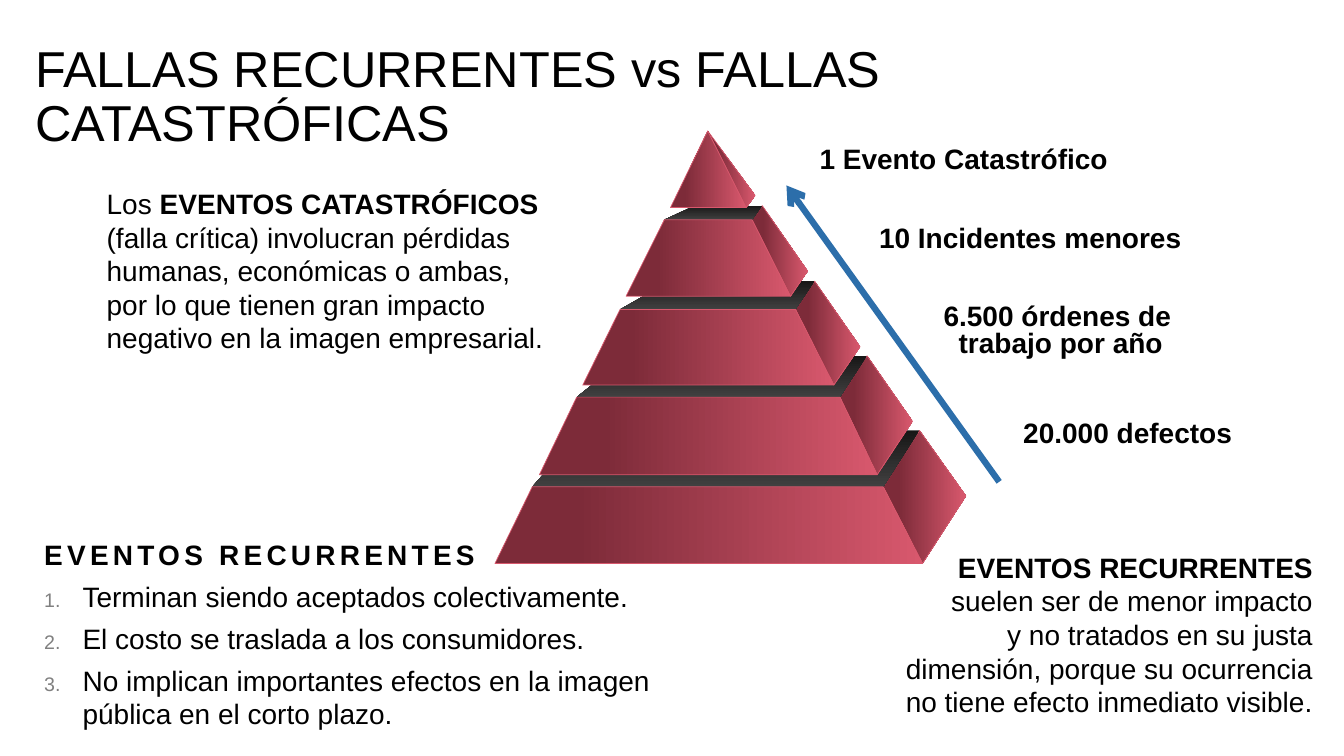
from dataclasses import dataclass

from lxml.etree import SubElement
from pptx import Presentation
from pptx.dml.color import RGBColor
from pptx.enum.shapes import MSO_CONNECTOR as CONNECTOR
from pptx.enum.text import MSO_ANCHOR as ANCHOR, PP_ALIGN as ALIGN
from pptx.oxml.ns import qn
from pptx.util import Pt

PX = 9144  # 100 px to the inch
FONT = "Arial"
BLACK, GRAY, BLUE = "000000", "808080", "2C6EAA"
DARK_RED, LIGHT_RED = "7D2B39", "D8586D"
LID_BACK, LID_FRONT = "181717", "404040"


@dataclass
class Tier:
    top: int
    bottom: int
    top_span: tuple  # left and right x of the front face
    bottom_span: tuple
    back: int  # y of the rear edge of the lid
    back_span: tuple
    corner: tuple  # rear bottom corner of the side face


# From the base to the tip, measured from the pyramid's box
TIERS = [
    Tier(353, 429, (37, 385), (0, 424), 297, (86, 421), (467, 362)),
    Tier(264, 341, (81, 342), (44, 379), 223, (132, 369), (414, 288)),
    Tier(177, 252, (124, 298), (87, 336), 149, (173, 317), (362, 214)),
    Tier(88, 164, (168, 255), (130, 293), 74, (198, 265), (310, 139)),
    Tier(0, 76, (211, 211), (174, 249), 0, (211, 211), (258, 64)),
]

# Text, left, top, width, height
LABELS = [
    (["1 Evento Catastrófico"], (803, 139, 347, 40), 0.9),
    (["10 Incidentes menores"], (862, 220, 324, 37), 0.8),
    (["6.500 órdenes de", "trabajo por año"], (926, 298, 256, 64), 0.8),
    (["20.000 defectos"], (1005, 414, 313, 37), 0.8),
]
CONSEQUENCES = [
    "Terminan siendo aceptados colectivamente.",
    "El costo se traslada a los consumidores.",
    "No implican importantes efectos en la imagen pública en el corto plazo.",
]


def color(value):
    return RGBColor.from_string(value)


def add_frame(slide, box, anchor=ANCHOR.TOP):
    shape = slide.shapes.add_textbox(*(length * PX for length in box))
    frame = shape.text_frame
    frame.word_wrap = True
    frame.vertical_anchor = anchor
    return frame


def add_paragraph(frame, runs, size=20, align=ALIGN.LEFT, line=1.0, after=0):
    """Append a paragraph made of (text, bold) runs."""
    paragraph = frame.paragraphs[0]
    if paragraph.runs:
        paragraph = frame.add_paragraph()
    paragraph.alignment = align
    paragraph.line_spacing = line
    paragraph.space_after = Pt(after)
    for text, bold in runs:
        run = paragraph.add_run()
        run.text = text
        run.font.bold = bold
    return paragraph


def style(paragraph, size=20):
    paragraph.font.name = FONT
    paragraph.font.size = Pt(size)
    paragraph.font.color.rgb = color(BLACK)


def indent(paragraph, left, first=0):
    properties = paragraph._p.get_or_add_pPr()
    properties.set("marL", str(left * PX))
    properties.set("indent", str(first * PX))
    return properties


def number(paragraph):
    properties = indent(paragraph, 38, -38)
    bullet_color = SubElement(properties, qn("a:buClr"))
    SubElement(bullet_color, qn("a:srgbClr"), val=GRAY)
    SubElement(properties, qn("a:buSzPct"), val="70000")
    SubElement(properties, qn("a:buFont"), typeface="+mj-lt")
    SubElement(properties, qn("a:buAutoNum"), type="arabicPeriod")


def add_title(slide, box):
    frame = add_frame(slide, box, ANCHOR.MIDDLE)
    text = "FALLAS RECURRENTES vs FALLAS CATASTRÓFICAS"
    style(add_paragraph(frame, [(text, False)], line=0.9), 36)


def add_catastrophic_note(slide, box):
    style(add_paragraph(add_frame(slide, box), [
        ("Los ", False),
        ("EVENTOS CATASTRÓFICOS ", True),
        ("(falla crítica) involucran pérdidas humanas, económicas o ambas, "
         "por lo que tienen gran impacto negativo en la imagen empresarial.", False),
    ]))


def add_recurrent_note(slide, box):
    frame = add_frame(slide, box)
    for text, bold in [
        ("EVENTOS RECURRENTES", True),
        ("suelen ser de menor impacto", False),
        ("y no tratados en su justa dimensión, porque su ocurrencia "
         "no tiene efecto inmediato visible.", False),
    ]:
        style(add_paragraph(frame, [(text, bold)], align=ALIGN.RIGHT))


def add_consequences(slide, box):
    frame = add_frame(slide, box)
    heading = add_paragraph(frame, [("EVENTOS RECURRENTES", True)], after=6)
    heading.runs[0]._r.get_or_add_rPr().set("spc", "300")
    style(heading)
    for text in CONSEQUENCES:
        paragraph = add_paragraph(frame, [(text, False)], after=6)
        number(paragraph)
        style(paragraph)


def add_labels(slide):
    for lines, box, spacing in LABELS:
        frame = add_frame(slide, box)
        for position, text in enumerate(lines):
            paragraph = add_paragraph(frame, [(text, True)], line=spacing)
            indent(paragraph, 15 * position)
            style(paragraph)


def add_arrow(slide, start, end):
    ends = [length * PX for length in (*start, *end)]
    arrow = slide.shapes.add_connector(CONNECTOR.STRAIGHT, *ends)
    arrow.line.color.rgb = color(BLUE)
    arrow.line.width = Pt(4.5)
    SubElement(arrow.line._get_or_add_ln(), qn("a:tailEnd"), type="arrow")
    SubElement(arrow._element.spPr, qn("a:effectLst"))


def add_face(slide, origin, points, stops, angle=0, outline=None):
    builder = slide.shapes.build_freeform(*points[0], scale=PX)
    builder.add_line_segments(points[1:], close=True)
    face = builder.convert_to_shape(*(length * PX for length in origin))
    face.shadow.inherit = False
    face.fill.gradient()
    face.fill.gradient_angle = angle
    for stop, (position, value) in zip(face.fill.gradient_stops, stops):
        stop.position = position
        stop.color.rgb = color(value)
    if outline:
        face.line.color.rgb = color(outline)
        face.line.width = Pt(0.5)
    else:
        face.line.fill.background()


def add_pyramid(slide, origin):
    red = [(0.19, DARK_RED), (1, LIGHT_RED)]
    gray = [(0, LID_BACK), (1, LID_FRONT)]
    for tier in TIERS:
        top_left, top_right = [(x, tier.top) for x in tier.top_span]
        bottom_left, bottom_right = [(x, tier.bottom) for x in tier.bottom_span]
        back_left, back_right = [(x, tier.back) for x in tier.back_span]
        side = [bottom_right, top_right, back_right, tier.corner]
        lid = [top_left, top_right, back_right, back_left]
        front = [top_left, top_right, bottom_right, bottom_left]
        add_face(slide, origin, side, red, outline=LIGHT_RED)
        if tier.back < tier.top:  # the tip has no lid
            add_face(slide, origin, lid, gray, angle=270)
        add_face(slide, origin, front, red, outline=LIGHT_RED)


def main():
    presentation = Presentation()
    presentation.slide_width = 1333 * PX
    presentation.slide_height = 750 * PX
    slide = presentation.slides.add_slide(presentation.slide_layouts[6])
    add_title(slide, (25, 41, 897, 113))
    add_recurrent_note(slide, (882, 541, 430, 178))
    add_labels(slide)
    add_consequences(slide, (34, 528, 625, 204))
    add_catastrophic_note(slide, (96, 180, 467, 178))
    add_arrow(slide, (991, 478), (780, 184))
    add_pyramid(slide, (491, 130))
    presentation.save("out.pptx")


if __name__ == "__main__":
    main()
